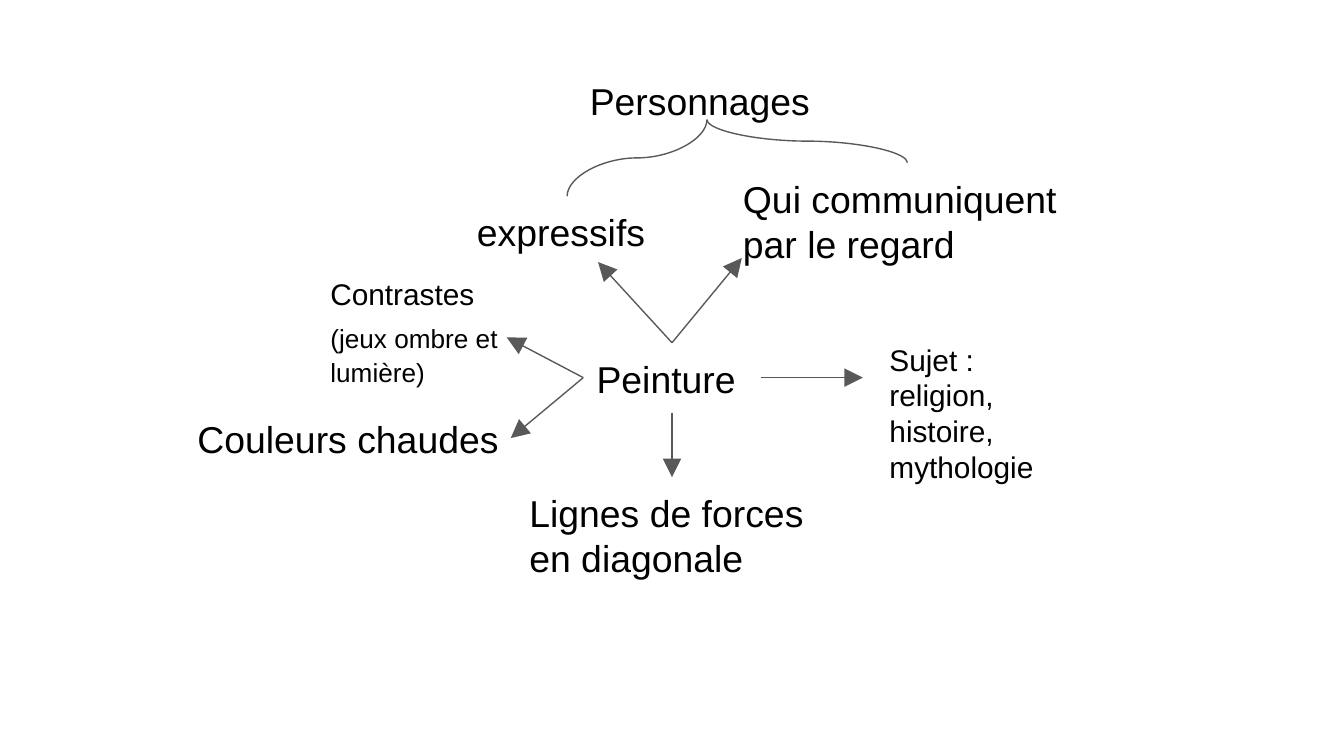
from lxml import etree
from pptx import Presentation
from pptx.dml.color import RGBColor
from pptx.enum.shapes import MSO_CONNECTOR
from pptx.oxml.ns import qn
from pptx.util import Inches, Pt

STRAIGHT, CURVE = MSO_CONNECTOR.STRAIGHT, MSO_CONNECTOR.CURVE
BLACK = RGBColor(0x00, 0x00, 0x00)
GRAY = RGBColor(0x59, 0x59, 0x59)
FONT = "Arial"
TOP, LEFT, BOTTOM, RIGHT = range(4)


def style_font(font, size):
    font.name = FONT
    font.size = Pt(size)
    font.color.rgb = BLACK


def add_label(slide, box, *paragraphs, size=20):
    """Add a text box; each paragraph is a string or a list of (text, size) runs."""
    sp = slide.shapes.add_textbox(*map(Inches, box))
    tf = sp.text_frame
    tf.word_wrap = True
    tf.margin_left = tf.margin_top = tf.margin_right = tf.margin_bottom = Inches(0.1)
    for i, content in enumerate(paragraphs):
        p = tf.paragraphs[0] if i == 0 else tf.add_paragraph()
        if isinstance(content, str):
            p.text = content
            style_font(p.font, size)
            continue
        for text, run_size in content:
            r = p.add_run()
            r.text = text
            style_font(r.font, run_size)
    return sp


def add_line(slide, kind, start, end):
    line = slide.shapes.add_connector(kind, *map(Inches, (*start, *end)))
    line.line.color.rgb = GRAY
    line.line.width = Pt(0.75)
    etree.SubElement(line._element.spPr, qn("a:effectLst"))
    return line


def add_arrow(slide, source, side, start, end):
    """Draw an arrow from the middle of one side of the source label."""
    arrow = add_line(slide, STRAIGHT, start, end)
    arrow.begin_connect(source, side)
    ln = arrow.line._get_or_add_ln()
    etree.SubElement(ln, qn("a:tailEnd"), type="triangle", w="lg", len="lg")
    return arrow


def add_brace_arm(slide, start, end):
    """Draw a curve that leaves downwards: a horizontal one, turned a quarter."""
    (x1, y1), (x2, y2) = start, end
    cx, cy = (x1 + x2) / 2, (y1 + y2) / 2
    half_w, half_h = (y2 - y1) / 2, abs(x2 - x1) / 2
    to_right = x2 > x1
    if to_right:
        half_w = -half_w
    arm = add_line(slide, CURVE, (cx - half_w, cy - half_h), (cx + half_w, cy + half_h))
    degrees = 270 if to_right else 90
    arm._element.spPr.find(qn("a:xfrm")).set("rot", str(degrees * 60000))


def main():
    prs = Presentation()
    prs.slide_width = Inches(10)
    prs.slide_height = prs.slide_width * 9 // 16
    slide = prs.slides.add_slide(prs.slide_layouts[6])

    painting = add_label(slide, (4.34, 2.55, 1.32, 0.52), "Peinture")
    add_label(slide, (2.36, 1.95, 1.63, 0.75), "Contrastes",
              [("(jeux ombre et", 14), (" ", 20), ("lumière)", 14)], size=16)
    add_label(slide, (1.37, 3, 2.62, 0.45), "Couleurs chaudes")
    force_lines = add_label(slide, (3.84, 3.55, 2.32, 1.02),
                            "Lignes de forces en diagonale")
    add_label(slide, (4.29, 0.48, 1.94, 0.4), "Personnages")
    add_label(slide, (3.45, 1.46, 1.55, 0.44), "expressifs")
    add_label(slide, (5.43, 1.21, 2.63, 0.69), "Qui communiquent par le regard")
    add_label(slide, (6.52, 2.44, 1.33, 0.63),
              "Sujet : religion, histoire, mythologie", size=16)

    for side, start, end in (
        (LEFT, (4.34, 2.81), (3.77, 2.51)),
        (LEFT, (4.34, 2.81), (3.8, 3.26)),
        (TOP, (5, 2.55), (4.45, 1.95)),
        (TOP, (5, 2.55), (5.52, 1.92)),
        (RIGHT, (5.66, 2.81), (6.42, 2.81)),
    ):
        add_arrow(slide, painting, side, start, end)
    down = add_arrow(slide, painting, BOTTOM, (5, 3.07), (5, 3.55))
    down.end_connect(force_lines, TOP)

    for end in ((4.22, 1.46), (6.75, 1.21)):
        add_brace_arm(slide, (5.26, 0.89), end)

    prs.save("out.pptx")


if __name__ == "__main__":
    main()
